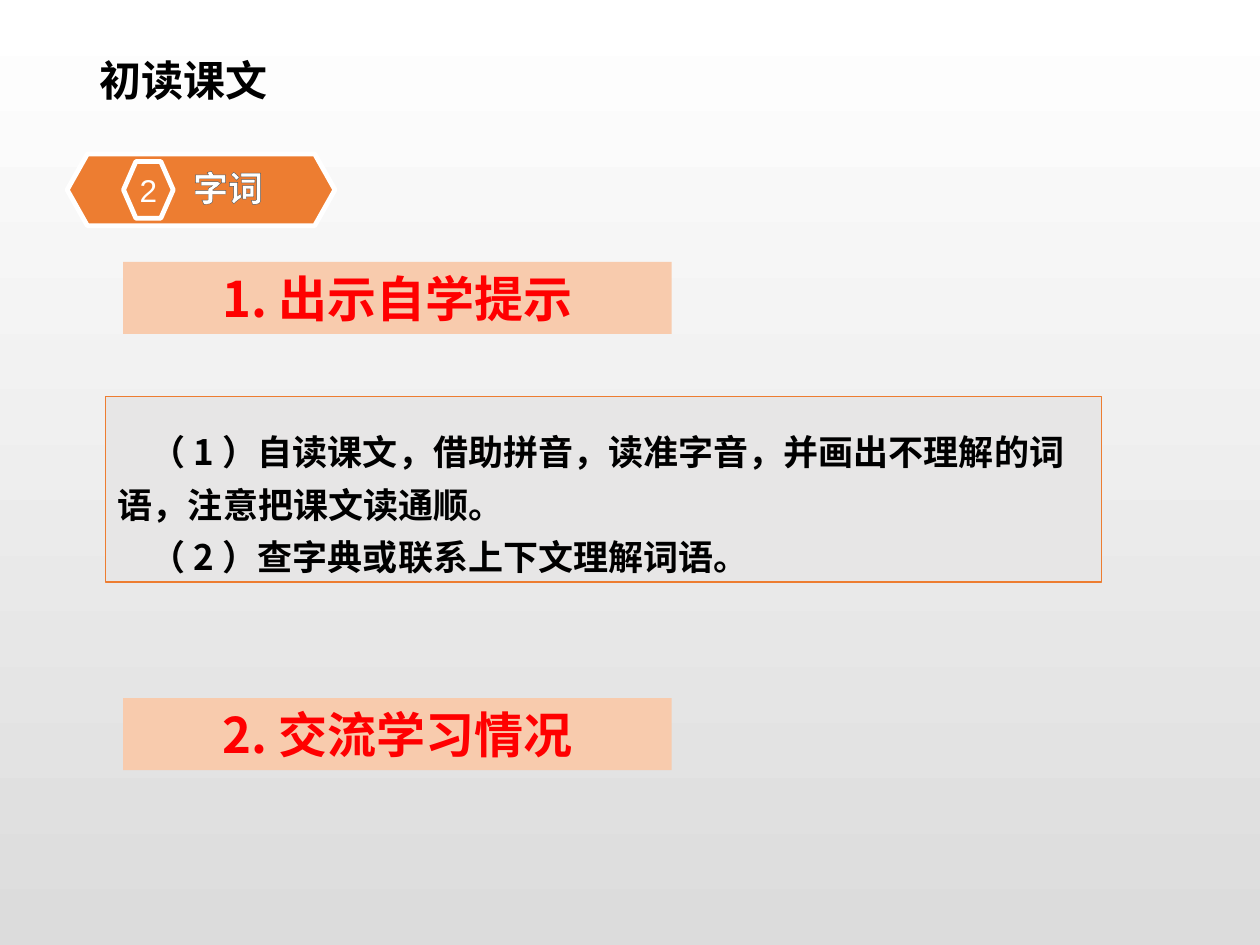
import pptx
import pptx.dml.color
import pptx.enum.shapes
import pptx.enum.text
import pptx.oxml
import pptx.oxml.ns
import pptx.util
from lxml import etree

Pt = pptx.util.Pt
SHAPES = pptx.enum.shapes.MSO_SHAPE
ALIGN = pptx.enum.text.PP_ALIGN
ANCHOR = pptx.enum.text.MSO_ANCHOR
CHINESE = "Noto Sans CJK SC"
ORANGE = "ED7D31"
WHITE = "FFFFFF"


def color(value):
    return pptx.dml.color.RGBColor.from_string(value)


def paint(shape, fill, line=None, width=0):
    shape.shadow.inherit = False
    shape.fill.solid()
    shape.fill.fore_color.rgb = color(fill)
    if line:
        shape.line.color.rgb = color(line)
        shape.line.width = Pt(width)
    else:
        shape.line.fill.background()


def frame_text(shape, insets=(0, 0, 0, 0), anchor=ANCHOR.MIDDLE, wrap=True):
    frame = shape.text_frame
    frame.word_wrap = wrap
    frame.vertical_anchor = anchor
    frame.margin_left, frame.margin_top, frame.margin_right, frame.margin_bottom = map(Pt, insets)
    return frame


def write(para, text, size=20, ink="000000", font=CHINESE, bold=True,
          align=ALIGN.CENTER, indent=0, leading=None, outline=None):
    para.alignment = align
    if indent:
        para._p.get_or_add_pPr().set("indent", str(Pt(indent)))
    if leading:
        para.line_spacing = Pt(leading)
    span = para.add_run()
    span.text = text
    span.font.size = Pt(size)
    span.font.bold = bold
    span.font.name = font
    span.font.color.rgb = color(ink)
    properties = span._r.get_or_add_rPr()
    latin = properties.find(pptx.oxml.ns.qn("a:latin"))
    east = etree.Element(pptx.oxml.ns.qn("a:ea"), typeface=font)
    latin.addnext(east)
    if outline:
        line = pptx.oxml.parse_xml(
            f'<a:ln {pptx.oxml.ns.nsdecls("a")} w="{Pt(0.75)}"><a:solidFill>'
            f'<a:srgbClr val="{outline}"/></a:solidFill></a:ln>')
        properties.insert(0, line)


def add_title(page, left, top, width, height, text):
    box = page.shapes.add_textbox(Pt(left), Pt(top), Pt(width), Pt(height))
    write(frame_text(box, wrap=False).paragraphs[0], text, size=24)


def add_heading(page, left, top, width, height, text):
    box = page.shapes.add_shape(SHAPES.RECTANGLE, Pt(left), Pt(top), Pt(width), Pt(height))
    paint(box, "F8CBAD")
    write(frame_text(box).paragraphs[0], text, size=28, ink="FF0000")


def add_hints(page, left, top, width, height, hints):
    box = page.shapes.add_shape(SHAPES.RECTANGLE, Pt(left), Pt(top), Pt(width), Pt(height))
    paint(box, "E7E6E6", ORANGE, 0.75)
    frame = frame_text(box, (7.2, 13.4, 7.2, 3.6), ANCHOR.TOP)
    for index, hint in enumerate(hints):
        para = frame.add_paragraph() if index else frame.paragraphs[0]
        write(para, hint, align=ALIGN.LEFT, indent=18.5, leading=30)


def add_badge(page, left, top, width, height, number, label):
    banner = page.shapes.add_shape(SHAPES.HEXAGON, Pt(left), Pt(top), Pt(width), Pt(height))
    banner.adjustments[0] = 0.282
    banner.adjustments[1] = 1.155
    paint(banner, ORANGE, WHITE, 2.75)
    write(frame_text(banner, (36.7, 0, 5.8, 2.9)).paragraphs[0], label,
          ink=WHITE, outline="595959")

    mark_left, mark_top, mark_width, mark_height = left + 32.2, top + 4.3, 28.4, 32.4
    corners = [(0.25, 0), (0.75, 0), (1, 0.5), (0.75, 1), (0.25, 1), (0, 0.5)]
    points = [(Pt(mark_left + x * mark_width), Pt(mark_top + y * mark_height)) for x, y in corners]
    builder = page.shapes.build_freeform(*points[0])
    builder.add_line_segments(points[1:], close=True)
    mark = builder.convert_to_shape()
    paint(mark, ORANGE, WHITE, 2.75)
    write(frame_text(mark).paragraphs[0], number, size=18, ink=WHITE, font="Arial", bold=False)


def add_background(page):
    fill = page.background.fill
    fill.gradient()
    fill.gradient_angle = 270
    for stop, value in zip(fill.gradient_stops, (WHITE, "DCDCDC")):
        stop.color.rgb = color(value)


def main():
    deck = pptx.Presentation()
    deck.slide_width, deck.slide_height = Pt(720), Pt(540)
    page = deck.slides.add_slide(deck.slide_layouts[6])
    add_background(page)
    add_title(page, 49, 27.4, 112, 36, "初读课文")
    add_hints(page, 60.3, 226.7, 569.3, 106, [
        "（1）自读课文，借助拼音，读准字音，并画出不理解的词语，注意把课文读通顺。",
        "（2）查字典或联系上下文理解词语。",
    ])
    for top, text in ((149.6, "1.出示自学提示"), (398.9, "2.交流学习情况")):
        add_heading(page, 70.4, top, 313.4, 41.2, text)
    add_badge(page, 38.4, 88, 153, 41, "2", "字词")
    deck.save("out.pptx")


if __name__ == "__main__":
    main()
